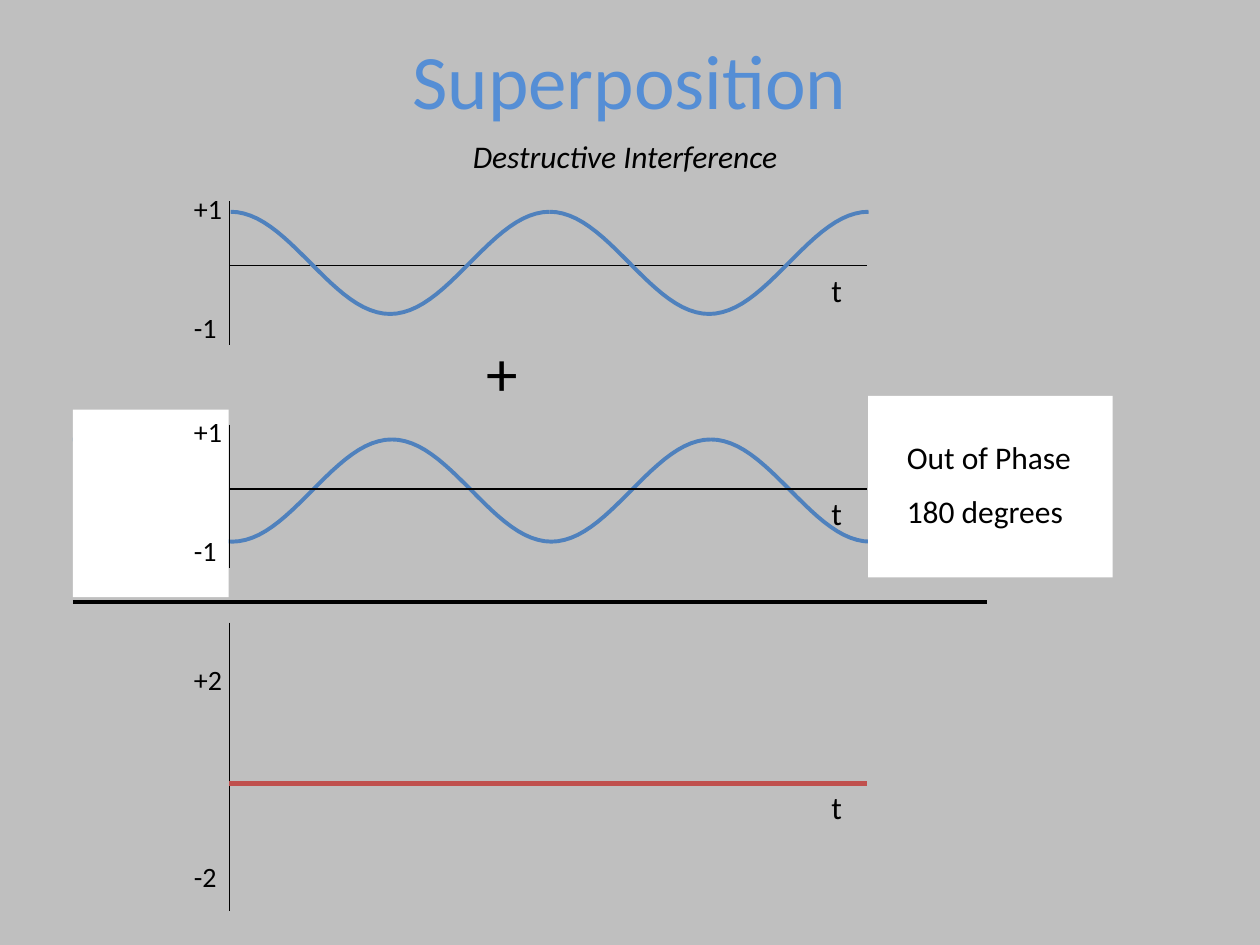
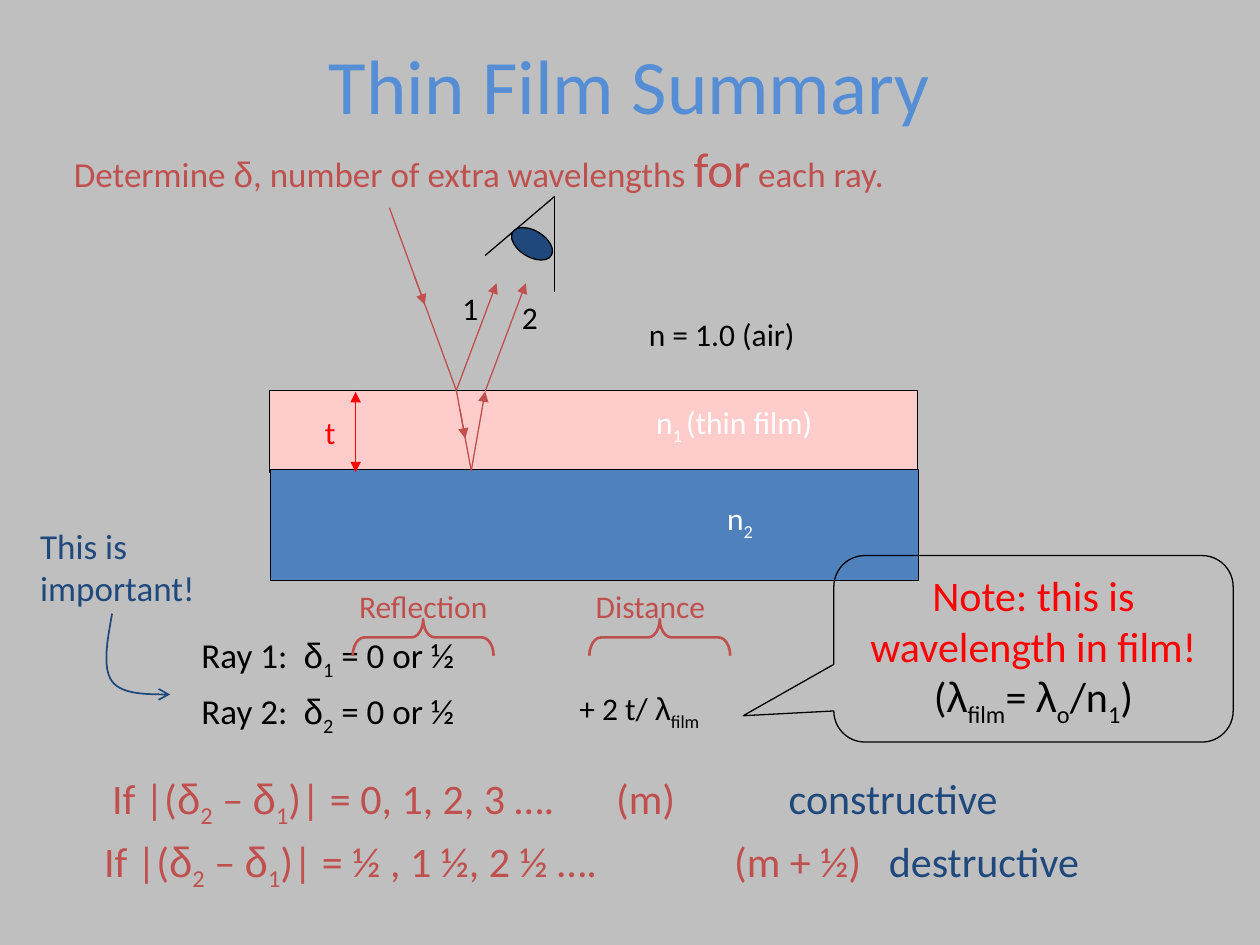
from dataclasses import dataclass
from itertools import groupby
from math import cos, pi

from lxml.etree import SubElement
from pptx import Presentation
from pptx.dml.color import RGBColor
from pptx.enum.shapes import MSO_CONNECTOR, MSO_SHAPE as SHAPE
from pptx.enum.text import MSO_ANCHOR as ANCHOR, PP_ALIGN as ALIGN
from pptx.oxml.ns import qn
from pptx.util import Cm, Pt


@dataclass(frozen=True)
class Theme:
    back: str = "BFBFBF"
    title: str = "558ED5"
    ink: str = "000000"
    paper: str = "FFFFFF"
    blue: str = "4F81BD"
    navy: str = "1F497D"
    brick: str = "C0504D"
    red: str = "FF0000"
    film: str = "FFCCCC"
    font: str = "Calibri"
    greek_font: str = "Arial"
    title_size: float = 44
    sign_size: float = 36
    large: float = 28
    rule: float = 24
    lead: float = 20
    body: float = 18
    tick: float = 16
    thin: float = 0.75
    thick: float = 2.25


T = Theme()
GREEK = "δλ"


def rgb(value):
    return RGBColor.from_string(value)


def add_markup(p, markup, color=None, size=None):
    """Add runs to p: {x} is a subscript, Greek letters take their own font."""
    for i, part in enumerate(markup.replace("}", "{").split("{")):
        for greek, chars in groupby(part, key=lambda ch: ch in GREEK):
            r = p.add_run()
            r.text = "".join(chars)
            if greek:
                r.font.name = T.greek_font
            if color:
                r.font.color.rgb = rgb(color)
            if size:
                r.font.size = Pt(size)
            if i % 2:
                r.font._element.set("baseline", "-25000")


def fill_text(tf, paragraphs, size, color, align=ALIGN.LEFT, anchor=ANCHOR.TOP,
              italic=None, tabs=()):
    """Each paragraph is a markup string or a list of add_markup arguments."""
    tf.word_wrap = True
    tf.vertical_anchor = anchor
    for i, spans in enumerate(paragraphs):
        p = tf.add_paragraph() if i else tf.paragraphs[0]
        p.alignment = align
        if i:
            p.space_before = Pt(size / 2)
        if tabs:
            tab_list = SubElement(p._p.get_or_add_pPr(), qn("a:tabLst"))
            for pos in tabs:
                SubElement(tab_list, qn("a:tab"), pos=str(Cm(pos)), algn="l")
        p.font.name, p.font.size, p.font.italic = T.font, Pt(size), italic
        p.font.color.rgb = rgb(color)
        for span in [(spans,)] if isinstance(spans, str) else spans:
            add_markup(p, *span)


def add_text(s, x, y, w, h, *paragraphs, size=T.body, color=T.ink, **style):
    sp = s.shapes.add_textbox(Cm(x), Cm(y), Cm(w), Cm(h))
    fill_text(sp.text_frame, paragraphs, size, color, **style)


def add_ends(line, **ends):
    """Set arrowheads, as in headEnd="triangle"."""
    for tag in ("headEnd", "tailEnd"):
        if tag in ends:
            SubElement(line._get_or_add_ln(), qn(f"a:{tag}"), type=ends[tag])


def add_line(s, start, end, color=T.ink, width=T.thin, **ends):
    c = s.shapes.add_connector(MSO_CONNECTOR.STRAIGHT, *map(Cm, (*start, *end)))
    c.line.color.rgb = rgb(color)
    c.line.width = Pt(width)
    add_ends(c.line, **ends)
    SubElement(c._element.spPr, qn("a:effectLst"))


def add_shape(s, kind, x, y, w, h, fill=None, line=None, width=T.thin, rotation=0):
    sp = s.shapes.add_shape(kind, Cm(x), Cm(y), Cm(w), Cm(h))
    sp.shadow.inherit = False
    sp.rotation = rotation
    if fill:
        sp.fill.solid()
        sp.fill.fore_color.rgb = rgb(fill)
    else:
        sp.fill.background()
    if line:
        sp.line.color.rgb = rgb(line)
        sp.line.width = Pt(width)
    else:
        sp.line.fill.background()
    return sp


def add_curve(s, points, color, width, **ends):
    start, *rest = [(Cm(x), Cm(y)) for x, y in points]
    builder = s.shapes.build_freeform(*start)
    builder.add_line_segments(rest, close=False)
    sp = builder.convert_to_shape()
    sp.shadow.inherit = False
    sp.fill.background()
    sp.line.color.rgb = rgb(color)
    sp.line.width = Pt(width)
    add_ends(sp.line, **ends)


def bezier(p0, p1, p2, p3, steps=16):
    for i in range(steps + 1):
        t = i / steps
        u = 1 - t
        yield tuple(u**3 * a + 3 * u * u * t * b + 3 * u * t * t * c + t**3 * d
                    for a, b, c, d in zip(p0, p1, p2, p3))


def new_slide(prs, title, title_top):
    s = prs.slides.add_slide(prs.slide_layouts[6])
    s.background.fill.solid()
    s.background.fill.fore_color.rgb = rgb(T.back)
    add_text(s, 1.9, title_top, 21.59, 3.18, title, size=T.title_size,
             color=T.title, align=ALIGN.CENTER, anchor=ANCHOR.MIDDLE)
    return s


# Superposition slide
AXIS_X, AXIS_W = 4.62, 12.85
PERIOD, WAVE_H = 6.43, 2.06


def add_wave(s, x, y, cycles, steps=48):
    for n in range(cycles):
        left = x + n * PERIOD
        points = [(left + PERIOD * i / steps,
                   y + WAVE_H / 2 * (1 - cos(2 * pi * i / steps)))
                  for i in range(steps + 1)]
        add_curve(s, points, T.blue, T.thick)


def add_axes(s, top, height, zero):
    add_line(s, (AXIS_X, top + zero), (AXIS_X + AXIS_W, top + zero))
    add_line(s, (AXIS_X, top), (AXIS_X, top + height))


def add_axis_labels(s, top, zero, ticks):
    add_text(s, 16.51, top + zero - 0.03, 0.97, 1.27, "t")
    for label, dy in ticks.items():
        add_text(s, 3.66, top + dy, 1.68, 0.94, label, size=T.tick)


def superposition_slide(prs):
    s = new_slide(prs, "Superposition", 0)
    add_text(s, 5.33, 2.64, 14.55, 1.27, "Destructive Interference",
             align=ALIGN.CENTER, italic=True)
    unit_ticks = {"+1": -0.32, "-1": 2.07}
    graphs = [(4.06, 2.9, 1.3, unit_ticks),
              (8.56, 2.9, 1.3, unit_ticks),
              (12.55, 5.82, 3.25, {"+2": 0.68, "-2": 4.65})]

    add_wave(s, 1.47, 8.86, 3)
    for top, height, zero, _ in graphs:
        add_axes(s, top, height, zero)
    add_shape(s, SHAPE.RECTANGLE, 1.47, 8.26, 3.14, 3.78, T.paper)
    for top, _, zero, ticks in graphs:
        add_axis_labels(s, top, zero, ticks)
    add_wave(s, 4.65, 4.27, 2)

    add_text(s, 9.55, 6.6, 1.63, 1.78, "+", size=T.sign_size)
    add_line(s, (1.47, 12.14), (19.89, 12.14), width=T.thick)
    add_line(s, (AXIS_X, 15.8), (AXIS_X + AXIS_W, 15.8), T.brick, 3)
    add_shape(s, SHAPE.RECTANGLE, 17.5, 7.98, 4.93, 3.66, T.paper)
    add_text(s, 18.03, 8.71, 5.97, 2.79, "Out of Phase", "180 degrees")


# Thin film slide
def add_layers(s, x, y):
    w, film_h = 13.06, 1.65
    add_shape(s, SHAPE.RECTANGLE, x, y, w, film_h, T.film, T.ink)
    add_shape(s, SHAPE.RECTANGLE, x + 0.02, y + 1.6, w, 2.24, T.blue, T.ink)
    add_text(s, x + 7.54, y + 0.13, 5.44, 1.27, "n{1 }(thin film)", color=T.paper)
    add_text(s, x + 8.97, y + 2.06, 1.98, 1.27, "n{2}", color=T.paper)
    add_text(s, x + 7.39, y - 1.65, 6.1, 1.27, "n = 1.0 (air)")
    add_line(s, (x + 1.73, y + 0.03), (x + 1.73, y + film_h), T.red,
             headEnd="triangle", tailEnd="triangle")
    add_text(s, x + 0.86, y + 0.33, 0.66, 1.27, "t", color=T.red)


def add_ray(s, start, end, arrow_from, arrow_to):
    """Draw a ray with an arrow on it between two fractions of its length."""
    def along(f):
        return tuple(a + f * (b - a) for a, b in zip(start, end))

    add_line(s, start, end, T.brick)
    add_line(s, along(arrow_from), along(arrow_to), T.brick, tailEnd="triangle")


def add_rays(s, x, y):
    source, hit = (x + 2.41, y - 3.68), (x + 3.76, y)
    bounce, leave = (x + 4.06, y + 1.62), (x + 4.34, y + 0.02)
    add_ray(s, source, hit, 0.37, 0.53)
    add_ray(s, hit, bounce, 0.24, 0.6)
    for start, end in [(hit, (x + 4.57, y - 2.16)), (bounce, leave),
                       (leave, (x + 5.16, y - 2.16))]:
        add_line(s, start, end, T.brick, tailEnd="triangle")
    add_text(s, x + 3.63, y - 2.16, 0.89, 1.27, "1")
    add_text(s, x + 4.83, y - 1.98, 1.24, 1.27, "2")


def add_eye(s, x, y):
    """Draw the eye with its lids meeting at x, y."""
    add_line(s, (x - 1.4, y + 1.19), (x, y))
    add_line(s, (x, y), (x, y + 1.93))
    add_shape(s, SHAPE.OVAL, x - 0.91, y + 0.69, 0.91, 0.53, T.navy, T.ink,
              rotation=31.3)


def add_braced_label(s, x, y, label):
    brace = add_shape(s, SHAPE.LEFT_BRACE, x + 1.17, y - 0.28, 0.74, 2.84,
                      line=T.brick, width=1.5, rotation=90)
    brace.adjustments[0] = 0.318
    add_text(s, x, y, 4.09, 1.02, label, color=T.brick)


def add_reminder(s, x, y):
    add_text(s, x, y, 5.36, 1.96, "This is important!", size=T.lead, color=T.navy)
    corner = (1.7, 3.3)
    bends = [((1.7, 1.93), (1.6, 2.49), (1.5, 3.02), corner),
             (corner, (1.9, 3.56), (2.39, 3.56), (2.87, 3.56))]
    points = [(x + dx, y + dy) for bend in bends for dx, dy in bezier(*bend)]
    add_curve(s, points, T.navy, 1, tailEnd="arrow")


def add_phase_shifts(s, x, y):
    for n in (1, 2):
        add_text(s, x, y + (n - 1) * 1.12, 5.84, 1.12,
                 f"Ray {n}:\tδ{{{n}}} = 0 or ½", size=T.lead, tabs=[2.06])
    add_text(s, x + 7.62, y + 1.12, 3.99, 1.27, "+ 2 t/ λ{film}")
    for dx, label in [(3.18, "Reflection"), (7.95, "Distance")]:
        add_braced_label(s, x + dx, y - 0.94, label)


def add_note(s, x, y, w, h):
    sp = add_shape(s, SHAPE.ROUNDED_RECTANGULAR_CALLOUT, x, y, w, h, line=T.ink)
    for i, value in enumerate((-0.727, 0.359, 0.167)):
        sp.adjustments[i] = value
    note = [("Note: this is wavelength in film! ", T.red),
            ("(λ{film}= λ{o}/n{1})",)]
    fill_text(sp.text_frame, [note], T.rule, T.ink, ALIGN.CENTER, ANCHOR.MIDDLE)


def add_condition(s, x, y, values, order, outcome, tabs):
    add_text(s, x, y, 23.5, 1.3,
             [(f"If |(δ{{2}} – δ{{1}})| = {values}\t{order}\t",), (outcome, T.navy)],
             size=T.rule, color=T.brick, tabs=tabs)


def thin_film_slide(prs):
    s = new_slide(prs, "Thin Film Summary", 0.1)
    add_text(s, 1.24, 2.67, 23.72, 1.45,
             [("Determine δ, number of extra wavelengths ",),
              ("for", None, T.large), (" each ray.",)],
             size=T.lead, color=T.brick)
    film = (5.44, 7.87)
    add_layers(s, *film)
    add_rays(s, *film)
    add_eye(s, 11.18, 3.96)
    add_phase_shifts(s, 3.81, 12.65)
    add_note(s, 16.81, 11.2, 8.05, 3.76)
    add_reminder(s, 0.56, 10.44)
    add_condition(s, 2.01, 15.44, "0, 1, 2, 3 ….", "(m)", "constructive",
                  (10.16, 13.64))
    add_condition(s, 1.85, 16.71, "½ , 1 ½, 2 ½ ….", "(m + ½)", "destructive",
                  (12.7, 15.82))


def main():
    prs = Presentation()
    prs.slide_width, prs.slide_height = Cm(25.4), Cm(19.05)
    superposition_slide(prs)
    thin_film_slide(prs)
    prs.save("out.pptx")


if __name__ == "__main__":
    main()
